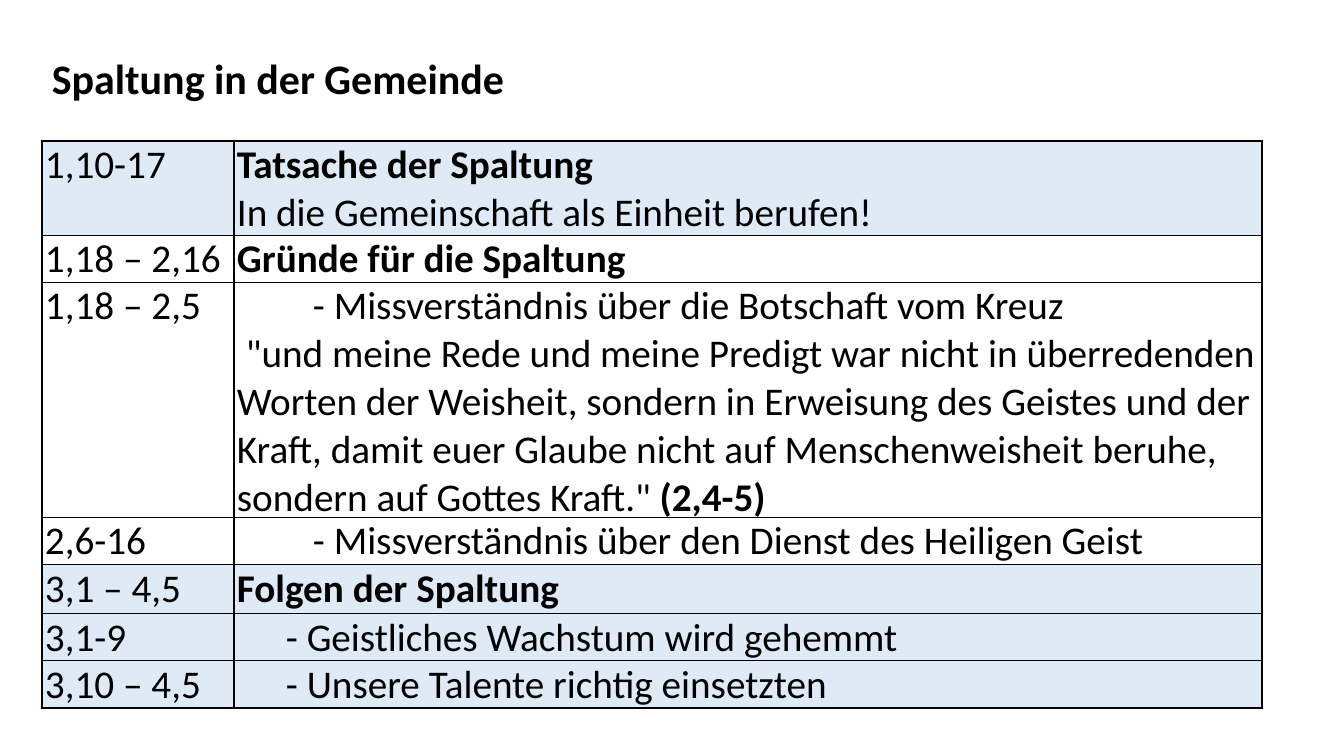
from dataclasses import dataclass

from lxml import etree
from pptx import Presentation
from pptx import util as u
from pptx.dml.color import RGBColor
from pptx.enum import text
from pptx.oxml import ns


@dataclass(frozen=True)
class Theme:
    """Colours, font and type sizes of the slide."""
    font: str = "Calibri"
    ink: str = "000000"
    tint: str = "DEEAF6"
    title: int = 30
    body: int = 28
    border: int = 1


THEME = Theme()
SLIDE_SIZE = (1344, 756)
TITLE_BOX = (42, 44, 672, 63)
OUTLINE_BOX = (42, 141, 1220, 566)
VERSE_WIDTH = 192
CELL_INSET = 3


@dataclass(frozen=True)
class Line:
    """One paragraph: a plain and a bold part with its indents in px."""
    plain: str = ""
    bold: str = ""
    level: int = 0
    margin: int = 0
    first: int = 0


@dataclass(frozen=True)
class Passage:
    """One table row: verses, its lines, its height in px and its tint."""
    verses: str
    lines: tuple
    height: int
    tinted: bool = False


QUOTE = ('"und meine Rede und meine Predigt war nicht in überredenden Worten der '
         "Weisheit, sondern in Erweisung des Geistes und der Kraft, damit euer Glaube "
         'nicht auf Menschenweisheit beruhe, sondern auf Gottes Kraft." ')

PASSAGES = [
    Passage("1,10-17", (Line(bold="Tatsache der Spaltung"),
                        Line("In die Gemeinschaft als Einheit berufen!")), 94, True),
    Passage("1,18 – 2,16", (Line(bold="Gründe für die Spaltung"),), 47),
    Passage("1,18 – 2,5",
            (Line("- Missverständnis über die Botschaft vom Kreuz", level=1, margin=76),
             Line(QUOTE, "(2,4-5)", first=9)), 235),
    Passage("2,6-16",
            (Line("- Missverständnis über den Dienst des Heiligen Geist",
                  level=1, margin=76),), 47),
    Passage("3,1 – 4,5", (Line(bold="Folgen der Spaltung"),), 49, True),
    Passage("3,1-9", (Line("- Geistliches Wachstum wird gehemmt", margin=49),), 47, True),
    Passage("3,10 – 4,5", (Line("- Unsere Talente richtig einsetzten", margin=49),), 47, True),
]


def px(length):
    """Turn px into EMU."""
    return u.Emu(round(length * 12192000 / SLIDE_SIZE[0]))


def style_run(run, size, bold):
    """Give a run the theme's font and colour."""
    run.font.name = THEME.font
    run.font.size = u.Pt(size)
    run.font.bold = bold
    run.font.color.rgb = RGBColor.from_string(THEME.ink)


def write_lines(frame, lines):
    """Fill a text frame with lines."""
    for number, line in enumerate(lines):
        paragraph = frame.paragraphs[0] if number == 0 else frame.add_paragraph()
        paragraph.level = line.level
        properties = paragraph._p.get_or_add_pPr()
        properties.set("marL", str(px(line.margin)))
        properties.set("indent", str(px(line.first)))
        for words, bold in ((line.plain, False), (line.bold, True)):
            if words:
                run = paragraph.add_run()
                run.text = words
                style_run(run, THEME.body, bold)


def add_borders(cell):
    """Draw a thin line on all four sides of a cell."""
    properties = cell._tc.get_or_add_tcPr()
    for place, side in enumerate(("a:lnL", "a:lnR", "a:lnT", "a:lnB")):
        border = etree.Element(ns.qn(side), w=str(u.Pt(THEME.border)))
        fill = etree.SubElement(border, ns.qn("a:solidFill"))
        etree.SubElement(fill, ns.qn("a:srgbClr"), val=THEME.ink)
        properties.insert(place, border)


def fill_cell(cell, lines, tinted):
    """Write one cell and set its insets, fill and borders."""
    cell.margin_left = cell.margin_right = px(CELL_INSET)
    cell.margin_top = cell.margin_bottom = 0
    cell.vertical_anchor = text.MSO_ANCHOR.TOP
    write_lines(cell.text_frame, lines)
    if tinted:
        cell.fill.solid()
        cell.fill.fore_color.rgb = RGBColor.from_string(THEME.tint)
    else:
        cell.fill.background()
    add_borders(cell)


def add_title(slide, box):
    """Place the heading in its box."""
    heading = slide.shapes.add_textbox(*map(px, box)).text_frame
    heading.word_wrap = True
    heading.text = "Spaltung in der Gemeinde"
    heading.paragraphs[0].line_spacing = 1.07
    style_run(heading.paragraphs[0].runs[0], THEME.title, True)


def add_outline(slide, box):
    """Place the table of passages in its box."""
    outline = slide.shapes.add_table(len(PASSAGES), 2, *map(px, box)).table
    outline.first_row = outline.horz_banding = False
    outline.columns[0].width = px(VERSE_WIDTH)
    outline.columns[1].width = px(box[2] - VERSE_WIDTH)
    for number, passage in enumerate(PASSAGES):
        outline.rows[number].height = px(passage.height)
        fill_cell(outline.cell(number, 0), (Line(passage.verses),), passage.tinted)
        fill_cell(outline.cell(number, 1), passage.lines, passage.tinted)


def main():
    """Build and save the slide."""
    deck = Presentation()
    deck.slide_width, deck.slide_height = map(px, SLIDE_SIZE)
    slide = deck.slides.add_slide(deck.slide_layouts[6])
    add_title(slide, TITLE_BOX)
    add_outline(slide, OUTLINE_BOX)
    deck.save("out.pptx")


if __name__ == "__main__":
    main()
